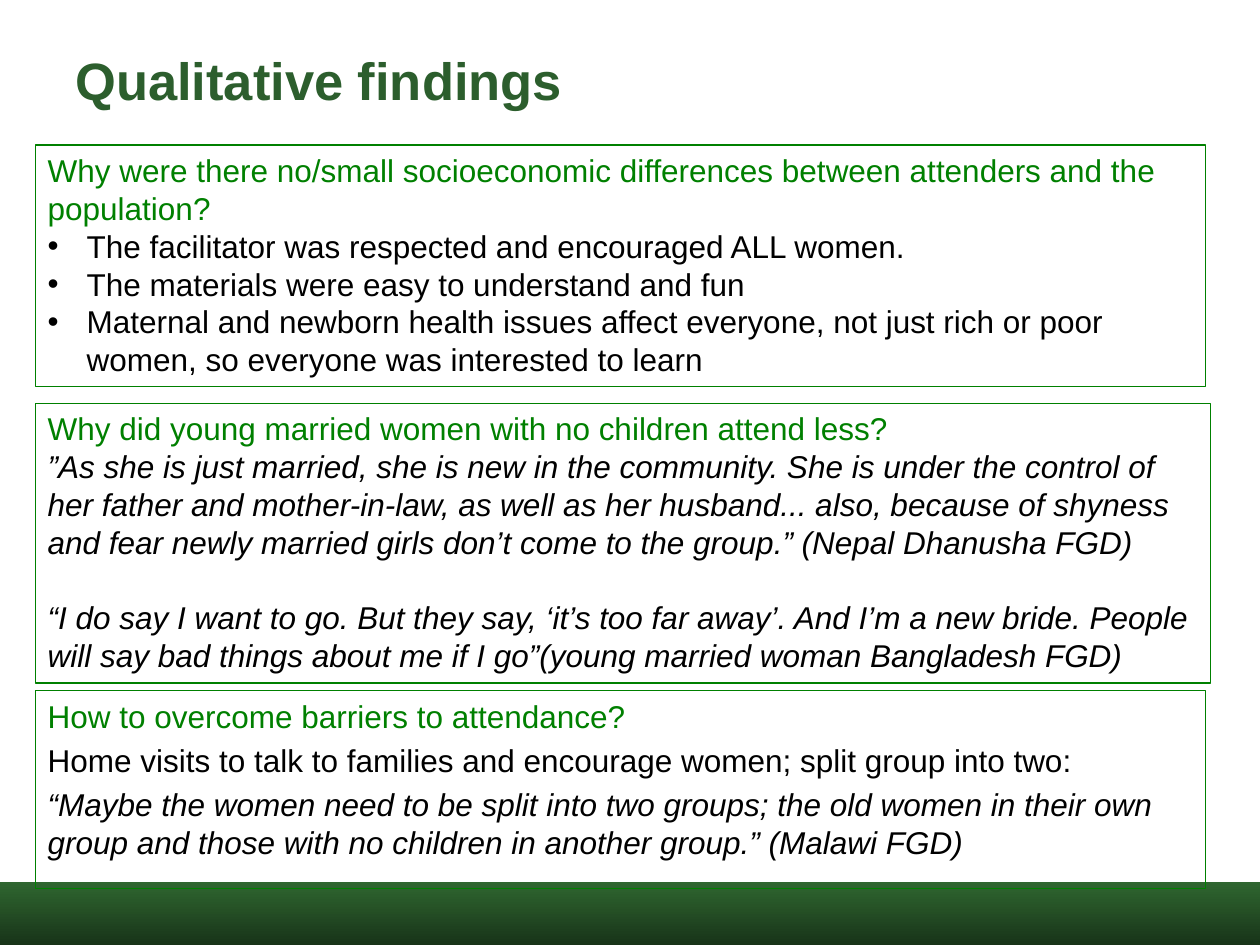
from pptx import Presentation
from pptx.dml.color import RGBColor
from pptx.enum.shapes import MSO_SHAPE
from pptx.enum.text import MSO_ANCHOR, PP_ALIGN
from pptx.oxml.ns import qn
from pptx.util import Inches, Pt
from lxml.etree import SubElement

GREEN = RGBColor(0x00, 0x80, 0x00)
TITLE_GREEN = RGBColor(0x2C, 0x5E, 0x2D)
WAVE_GREEN = RGBColor(0x2F, 0x66, 0x30)
BLACK = RGBColor(0, 0, 0)
FONT = "Arial"
TEXT_SIZE, LINE_PITCH = 18, 21.6
LEFT, INDENT = 0.28, 0.31

TITLE = "Qualitative findings"

# Each box: top, width, height, space before paragraphs (pt), heading, [(style, text)]
BOXES = [
    (5.48, 9.29, 1.57, 3.6, "How to overcome barriers to attendance?", [
        ("plain", "Home visits to talk to families and encourage women; split group into two:"),
        ("quote", "“Maybe the women need to be split into two groups; the old women in their "
                  "own group and those with no children in another group.” (Malawi FGD)"),
    ]),
    (3.2, 9.33, 2.22, 0, "Why did young married women with no children attend less?", [
        ("quote", "”As she is just married, she is new in the community. She is under the "
                  "control of her father and mother-in-law, as well as her husband... also, "
                  "because of shyness and fear newly married girls don’t come to the group.” "
                  "(Nepal Dhanusha FGD)"),
        ("next quote", "“I do say I want to go. But they say, ‘it’s too far away’. And I’m a new "
                       "bride. People will say bad things about me if I go”(young married woman "
                       "Bangladesh FGD)"),
    ]),
    (1.15, 9.29, 1.92, 0,
     "Why were there no/small socioeconomic differences between attenders and the population?", [
         ("bullet", "The facilitator was respected and encouraged ALL women."),
         ("bullet", "The materials were easy to understand and fun"),
         ("bullet", "Maternal and newborn health issues affect everyone, not just rich or poor "
                    "women, so everyone was interested to learn"),
     ]),
]

# Crest of the footer wave, left to right
WAVE = [(0, 7.3), (0.18, 7.29), (0.33, 7.26), (0.48, 7.23), (0.65, 7.19), (0.86, 7.15),
        (1.11, 7.11), (1.54, 7.07), (1.99, 7.06), (2.81, 7.09), (3.25, 7.12), (4.04, 7.2),
        (4.94, 7.3), (5.56, 7.36), (6.27, 7.39), (6.61, 7.39), (6.94, 7.35), (7.4, 7.27),
        (7.88, 7.18), (8.27, 7.12), (8.89, 7.07), (9.32, 7.06), (9.65, 7.07), (10, 7.09)]


def add_run(p, text, size, color, bold=False, italic=False):
    r = p.add_run()
    r.text = text
    f = r.font
    f.name, f.size, f.bold, f.italic = FONT, Pt(size), bold, italic
    f.color.rgb = color


def add_bullet(p):
    pPr = p._p.get_or_add_pPr()
    pPr.set("marL", str(Inches(INDENT)))
    pPr.set("indent", str(-Inches(INDENT)))
    SubElement(pPr, qn("a:buFont")).set("typeface", FONT)
    SubElement(pPr, qn("a:buChar")).set("char", "•")


def add_box(s, top, width, height, gap, heading, body):
    sp = s.shapes.add_shape(MSO_SHAPE.RECTANGLE, Inches(LEFT), Inches(top),
                            Inches(width), Inches(height))
    sp.shadow.inherit = False
    sp.fill.background()
    sp.line.color.rgb = GREEN
    sp.line.width = Pt(0.75)
    tf = sp.text_frame
    tf.word_wrap = True
    tf.vertical_anchor = MSO_ANCHOR.TOP
    for i, (style, text) in enumerate([("heading", heading)] + body):
        p = tf.paragraphs[0] if i == 0 else tf.add_paragraph()
        p.alignment = PP_ALIGN.LEFT
        p.line_spacing = Pt(LINE_PITCH)
        if i:
            p.space_before = Pt(LINE_PITCH if style == "next quote" else gap)
        if style == "bullet":
            add_bullet(p)
        add_run(p, text, TEXT_SIZE, GREEN if style == "heading" else BLACK,
                italic=style.endswith("quote"))


prs = Presentation()
prs.slide_width, prs.slide_height = Inches(10), Inches(7.5)
s = prs.slides.add_slide(prs.slide_layouts[6])

# Footer wave
fb = s.shapes.build_freeform(*WAVE[0], scale=Inches(1))
fb.add_line_segments(WAVE[1:] + [(10, 7.5), (0, 7.5)], close=True)
wave = fb.convert_to_shape()
wave.shadow.inherit = False
wave.line.fill.background()
wave.fill.gradient()
wave.fill.gradient_angle = 270
for stop, color, position in zip(wave.fill.gradient_stops, (WAVE_GREEN, BLACK), (0, 1)):
    stop.color.rgb = color
    stop.position = position

# Title
title = s.shapes.add_textbox(Inches(0.5), Inches(0.21), Inches(6.94), Inches(0.85))
tf = title.text_frame
tf.word_wrap = True
tf.vertical_anchor = MSO_ANCHOR.MIDDLE
add_run(tf.paragraphs[0], TITLE, 30, TITLE_GREEN, bold=True)

# Finding boxes
for box in BOXES:
    add_box(s, *box)

prs.save("out.pptx")
